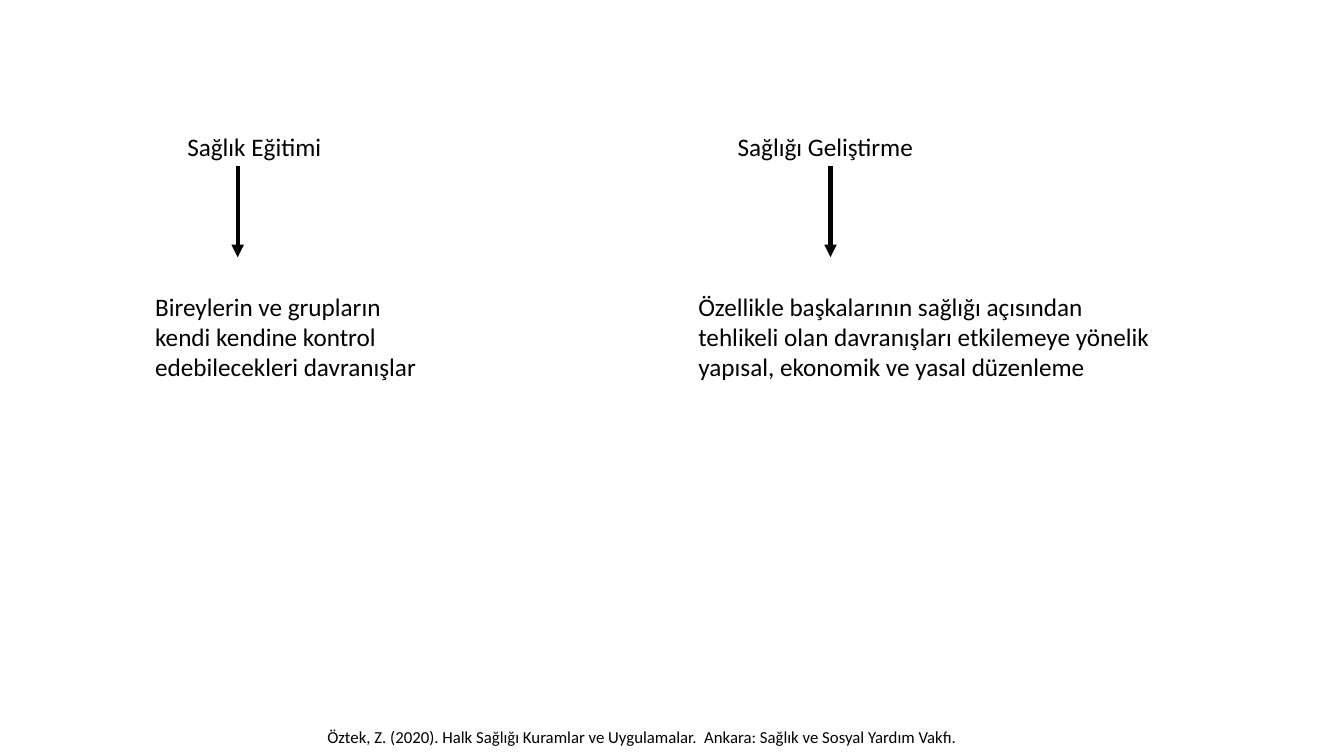
from lxml.etree import SubElement
from pptx import Presentation
from pptx.dml.color import RGBColor
from pptx.enum.shapes import MSO_CONNECTOR
from pptx.enum.text import MSO_AUTO_SIZE, PP_ALIGN
from pptx.oxml.ns import qn
from pptx.util import Cm, Pt

BLACK = RGBColor(0, 0, 0)
FONT = "Calibri"

# Lengths in cm: heading and description are (text, left, width)
COLUMNS = [
    {
        "heading": ("Sağlık Eğitimi", 4.47, 10.11),
        "arrow_x": 5.99,
        "description": (
            "Bireylerin ve grupların kendi kendine kontrol "
            "edebilecekleri davranışlar", 3.66, 7.19),
    },
    {
        "heading": ("Sağlığı Geliştirme", 18.34, 6.4),
        "arrow_x": 20.93,
        "description": (
            "Özellikle başkalarının sağlığı açısından tehlikeli olan "
            "davranışları etkilemeye yönelik yapısal, ekonomik ve yasal "
            "düzenleme", 17.35, 11.91),
    },
]
CITATION = ("Öztek, Z. (2020). Halk Sağlığı Kuramlar ve Uygulamalar.  "
            "Ankara: Sağlık ve Sosyal Yardım Vakfı.", 6.73, 20.42)

HEADING_TOP, HEADING_HEIGHT = 3.19, 1.02
ARROW_TOP, ARROW_BOTTOM = 4.19, 6.48
DESCRIPTION_TOP, DESCRIPTION_HEIGHT = 7.21, 2.57
CITATION_TOP, CITATION_HEIGHT = 18.16, 0.79


def add_text(s, item, top, height, size=18):
    """Add a wrapped text box and return its paragraph."""
    text, left, width = item
    tf = s.shapes.add_textbox(Cm(left), Cm(top), Cm(width), Cm(height)).text_frame
    tf.word_wrap = True
    tf.auto_size = MSO_AUTO_SIZE.SHAPE_TO_FIT_TEXT
    p = tf.paragraphs[0]
    p.text = text
    p.font.name = FONT
    p.font.size = Pt(size)
    p.font.color.rgb = BLACK
    return p


def add_down_arrow(s, x):
    arrow = s.shapes.add_connector(
        MSO_CONNECTOR.STRAIGHT, Cm(x), Cm(ARROW_TOP), Cm(x), Cm(ARROW_BOTTOM))
    arrow.line.color.rgb = BLACK
    arrow.line.width = Pt(3)
    SubElement(arrow.line._get_or_add_ln(), qn("a:tailEnd"), type="triangle")
    SubElement(arrow._element.spPr, qn("a:effectLst"))


def main():
    prs = Presentation()
    prs.slide_width, prs.slide_height = Cm(33.87), Cm(19.05)
    s = prs.slides.add_slide(prs.slide_layouts[6])

    for column in COLUMNS:
        add_text(s, column["heading"], HEADING_TOP, HEADING_HEIGHT)
        add_down_arrow(s, column["arrow_x"])
        add_text(s, column["description"], DESCRIPTION_TOP, DESCRIPTION_HEIGHT)

    p = add_text(s, CITATION, CITATION_TOP, CITATION_HEIGHT, size=12)
    p.alignment = PP_ALIGN.JUSTIFY
    p.line_spacing = 1.07
    p.space_after = Pt(8)
    p._p.get_or_add_pPr().set("marL", str(Cm(1.27)))

    prs.save("out.pptx")


if __name__ == "__main__":
    main()
